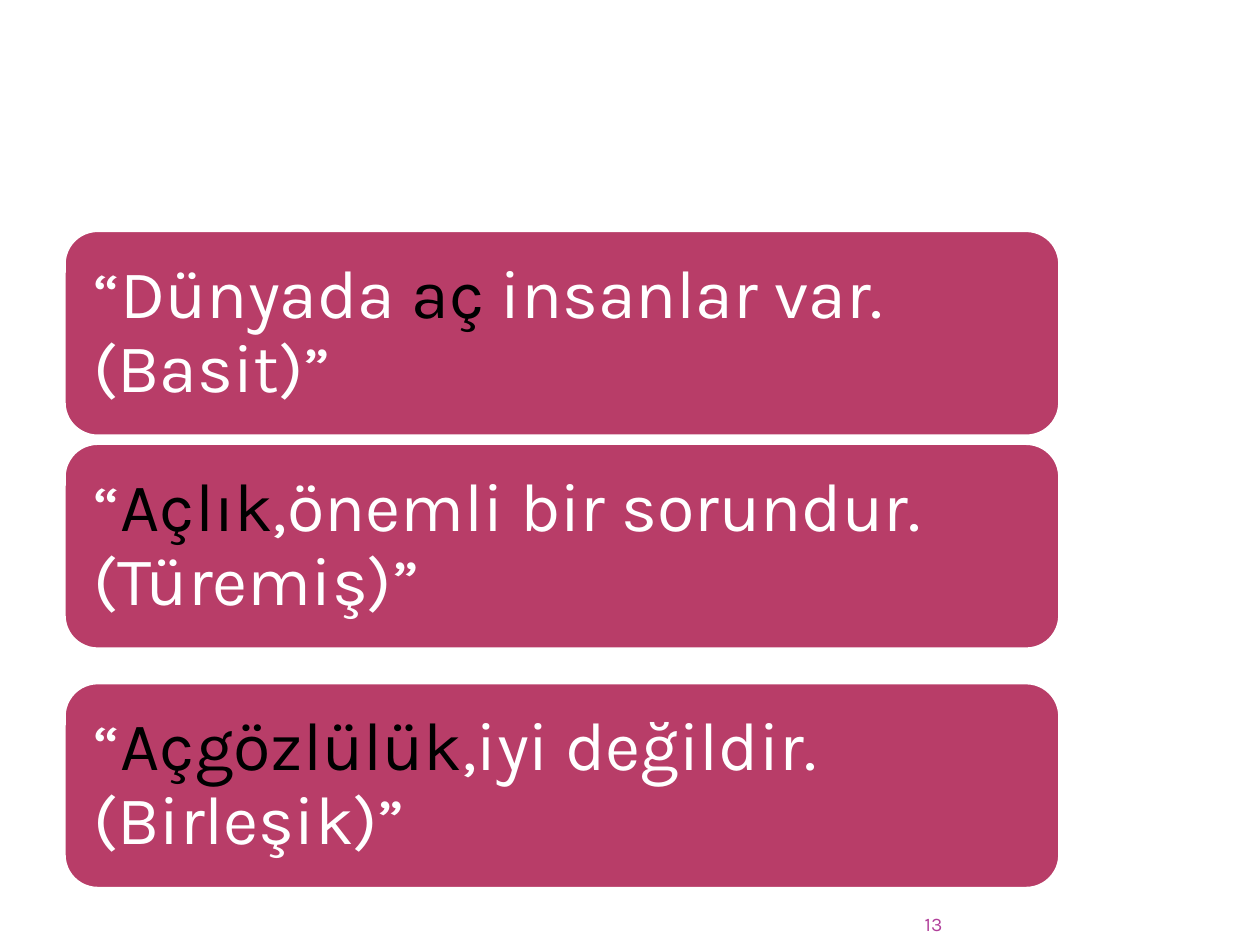
from dataclasses import dataclass
from typing import Any

from pptx import Presentation
from pptx import util as u
from pptx.dml import color
from pptx.enum import shapes, text

COLOURS = {"card": "B83D68", "plain": "FFFFFF", "key": "000000", "number": "B13F9A"}
WIDTH, HEIGHT = 10, 7.5

CARDS = [
    (1.82, "“Dünyada ", "aç", " insanlar var.(Basit)”"),
    (3.51, "“", "Açlık", ",önemli bir sorundur.(Türemiş)”"),
    (5.41, "“", "Açgözlülük", ",iyi değildir.(Birleşik)”"),
]


def rgb(name):
    return color.RGBColor.from_string(COLOURS[name])


@dataclass
class Painter:
    page: Any
    font: str = "Karla"
    card_size: float = 39
    number_size: float = 11

    def frame(self, shape, inset, anchor):
        frame = shape.text_frame
        frame.word_wrap = True
        frame.vertical_anchor = anchor
        frame.margin_left = frame.margin_right = u.Inches(inset)
        frame.margin_top = frame.margin_bottom = u.Inches(inset)
        return frame

    def add_spans(self, para, spans, size, align):
        para.alignment = align
        para.font.name = self.font
        para.font.size = u.Pt(size)
        for words, colour in spans:
            span = para.add_run()
            span.text = words
            span.font.color.rgb = rgb(colour)

    def card(self, top, before, key, after):
        box = self.page.shapes.add_shape(
            shapes.MSO_SHAPE.ROUNDED_RECTANGLE,
            u.Inches(0.5), u.Inches(top), u.Inches(7.92), u.Inches(1.65))
        box.shadow.inherit = False
        box.fill.solid()
        box.fill.fore_color.rgb = rgb("card")
        box.line.color.rgb = rgb("plain")
        box.line.width = u.Pt(3.15)
        para = self.frame(box, 0.16, text.MSO_ANCHOR.MIDDLE).paragraphs[0]
        para.line_spacing = 0.9
        spans = [(before, "plain"), (key, "key"), (after, "plain")]
        self.add_spans(para, spans, self.card_size, text.PP_ALIGN.LEFT)

    def page_number(self, number):
        box = self.page.shapes.add_textbox(
            u.Inches(6.84), u.Inches(7.17), u.Inches(0.64), u.Inches(0.25))
        para = self.frame(box, 0, text.MSO_ANCHOR.BOTTOM).paragraphs[0]
        self.add_spans(para, [(number, "number")], self.number_size, text.PP_ALIGN.RIGHT)


def main():
    deck = Presentation()
    deck.slide_width, deck.slide_height = u.Inches(WIDTH), u.Inches(HEIGHT)
    painter = Painter(deck.slides.add_slide(deck.slide_layouts[6]))
    for card in CARDS:
        painter.card(*card)
    painter.page_number("13")
    deck.save("out.pptx")


if __name__ == "__main__":
    main()
